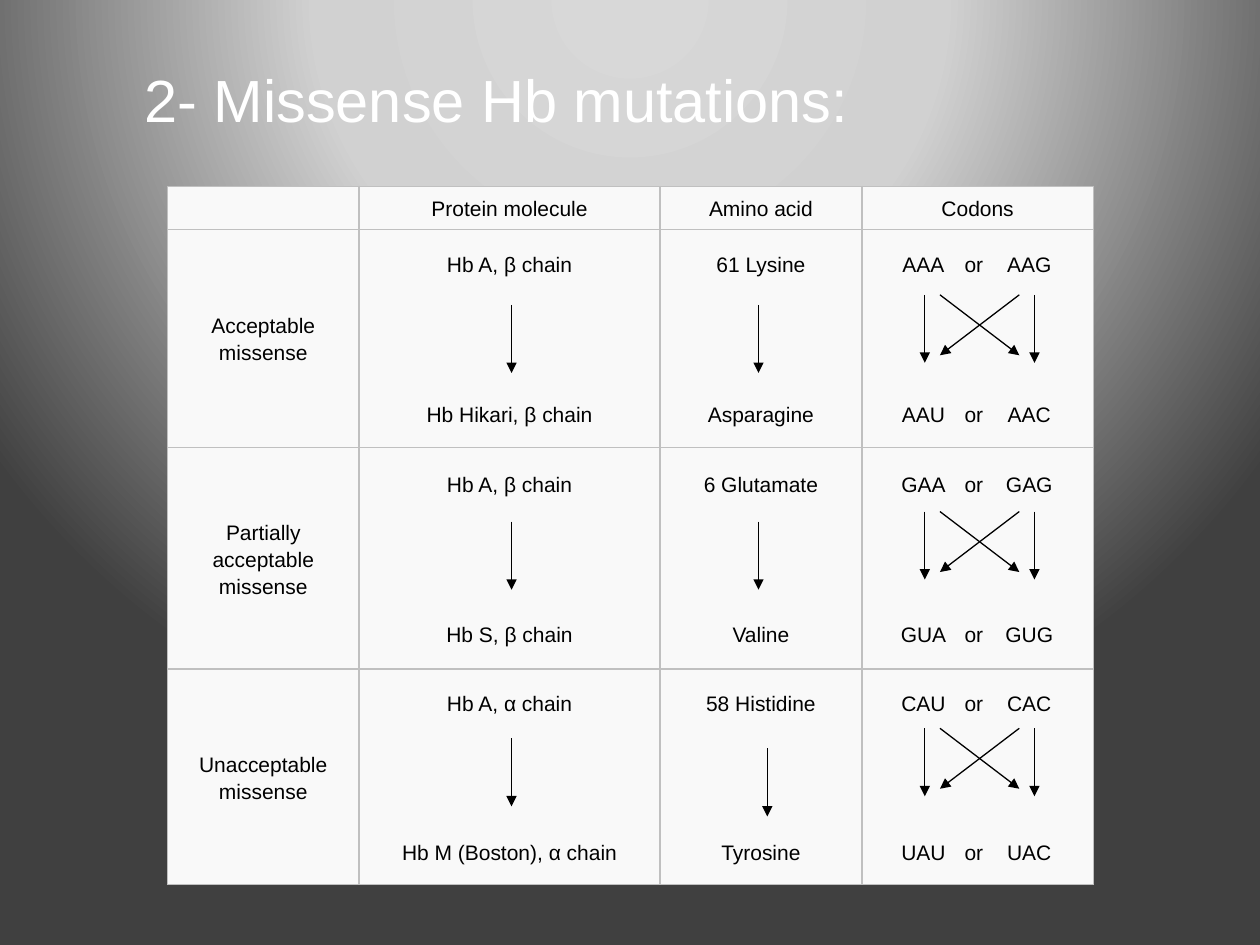
from itertools import product
from lxml.etree import SubElement
from pptx import Presentation
from pptx.dml.color import RGBColor
from pptx.enum.shapes import MSO_CONNECTOR
from pptx.enum.text import MSO_ANCHOR, PP_ALIGN
from pptx.oxml import parse_xml
from pptx.oxml.ns import nsdecls, qn
from pptx.util import Inches, Pt

TITLE = "2- Missense Hb mutations:"
HEADERS = ["", "Protein molecule", "Amino acid", "Codons"]
MUTATIONS = [
    {
        "kind": "Acceptable missense",
        "protein": ("Hb A, β chain", "Hb Hikari, β chain"),
        "amino": ("61 Lysine", "Asparagine"),
        "codons": (("AAA", "AAG"), ("AAU", "AAC")),
        "amino_arrow": (6.02, 2.42),
    },
    {
        "kind": "Partially acceptable missense",
        "protein": ("Hb A, β chain", "Hb S, β chain"),
        "amino": ("6 Glutamate", "Valine"),
        "codons": (("GAA", "GAG"), ("GUA", "GUG")),
        "amino_arrow": (6.02, 4.14),
    },
    {
        "kind": "Unacceptable missense",
        "protein": ("Hb A, α chain", "Hb M (Boston), α chain"),
        "amino": ("58 Histidine", "Tyrosine"),
        "codons": (("CAU", "CAC"), ("UAU", "UAC")),
        "amino_arrow": (6.09, 5.94),
    },
]
THEME = {
    "font": "Arial",
    "title_size": 34,
    "cell_size": 12,
    "title": "FFFFFF",
    "text": "000000",
    "cell": "F9F9F9",
    "border": "C0C0C0",
    "background": [(0, "D8D8D8"), (40, "D1D1D1"), (100, "404040")],
}
COLUMNS = [1.52, 2.39, 1.6, 1.84]
ROWS = [0.34, 1.73, 1.76, 1.71]
CODON_TABS = [0.42, 0.82, 1.26]
PAIR_GAP = 70
PROTEIN_X, PROTEIN_TOP = 4.06, 2.42
CROSS_TOP, ARROW_STEP = 2.34, 1.72
ARROW_LENGTH, CROSS_HEIGHT = 0.54, 0.48
OUTER_X, INNER_X = (7.34, 8.21), (7.46, 8.09)


def set_background(slide):
    stops = "".join(
        f'<a:gs pos="{position * 1000}"><a:srgbClr val="{color}"/></a:gs>'
        for position, color in THEME["background"]
    )
    slide.element.cSld.insert(0, parse_xml(
        f'<p:bg {nsdecls("p", "a")}><p:bgPr><a:gradFill rotWithShape="1">'
        f'<a:gsLst>{stops}</a:gsLst><a:path path="circle">'
        '<a:fillToRect l="50000" t="-80000" r="50000" b="180000"/></a:path>'
        "</a:gradFill><a:effectLst/></p:bgPr></p:bg>"
    ))


def style_font(font, size, color):
    font.name = THEME["font"]
    font.size = Pt(size)
    font.color.rgb = RGBColor.from_string(THEME[color])


def add_title(slide):
    shape = slide.shapes.add_textbox(Inches(1.05), Inches(0.31), Inches(8.56), Inches(0.94))
    frame = shape.text_frame
    frame.word_wrap = True
    frame.vertical_anchor = MSO_ANCHOR.MIDDLE
    run = frame.paragraphs[0].add_run()
    run.text = TITLE
    style_font(run.font, THEME["title_size"], "title")


def add_tabs(paragraph):
    tabs = SubElement(paragraph._p.get_or_add_pPr(), qn("a:tabLst"))
    for position in CODON_TABS:
        SubElement(tabs, qn("a:tab"), pos=str(Inches(position)), algn="ctr")


def style_cell(cell):
    properties = cell._tc.get_or_add_tcPr()
    for side in ("a:lnL", "a:lnR", "a:lnT", "a:lnB"):
        line = SubElement(properties, qn(side), w=str(Pt(1)))
        SubElement(SubElement(line, qn("a:solidFill")), qn("a:srgbClr"), val=THEME["border"])
    cell.fill.solid()
    cell.fill.fore_color.rgb = RGBColor.from_string(THEME["cell"])
    cell.vertical_anchor = MSO_ANCHOR.MIDDLE
    cell.margin_left = cell.margin_right = Inches(0.07)
    cell.margin_top = cell.margin_bottom = 0


def fill_cell(cell, lines):
    style_cell(cell)
    frame = cell.text_frame
    for index, line in enumerate(lines):
        paragraph = frame.add_paragraph() if index else frame.paragraphs[0]
        paragraph.line_spacing = 1.15
        if index:
            paragraph.space_before = Pt(PAIR_GAP)
        if "\t" in line:
            paragraph.alignment = PP_ALIGN.LEFT
            add_tabs(paragraph)
        else:
            paragraph.alignment = PP_ALIGN.CENTER
        paragraph.font.size = Pt(THEME["cell_size"])
        if line:
            run = paragraph.add_run()
            run.text = line
            style_font(run.font, THEME["cell_size"], "text")


def add_mutation_table(slide):
    table = slide.shapes.add_table(
        len(ROWS), len(COLUMNS), Inches(1.33), Inches(1.48),
        Inches(sum(COLUMNS)), Inches(sum(ROWS)),
    ).table
    table.first_row = table.horz_banding = False
    for column, width in zip(table.columns, COLUMNS):
        column.width = Inches(width)
    for row, height in zip(table.rows, ROWS):
        row.height = Inches(height)
    content = [[(header,) for header in HEADERS]]
    for mutation in MUTATIONS:
        codons = [f"\t{first}\tor\t{second}" for first, second in mutation["codons"]]
        content.append([(mutation["kind"],), mutation["protein"], mutation["amino"], codons])
    for row, column in product(range(len(ROWS)), range(len(COLUMNS))):
        fill_cell(table.cell(row, column), content[row][column])


def add_arrow(shapes, start, end):
    connector = shapes.add_connector(
        MSO_CONNECTOR.STRAIGHT, *[Inches(value) for value in (*start, *end)]
    )
    connector.line.width = Pt(0.75)
    connector.line.color.rgb = RGBColor.from_string(THEME["text"])
    SubElement(connector.line._get_or_add_ln(), qn("a:tailEnd"), type="triangle")
    SubElement(connector._element.spPr, qn("a:effectLst"))


def add_down_arrow(shapes, x, top):
    add_arrow(shapes, (x, top), (x, top + ARROW_LENGTH))


def add_codon_arrows(slide, top):
    shapes = slide.shapes.add_group_shape().shapes
    left, right = INNER_X
    for start, end in ((right, left), (left, right)):
        add_arrow(shapes, (start, top), (end, top + CROSS_HEIGHT))
    for x in OUTER_X:
        add_down_arrow(shapes, x, top)


def main():
    presentation = Presentation()
    presentation.slide_width = Inches(10)
    presentation.slide_height = Inches(7.5)
    slide = presentation.slides.add_slide(presentation.slide_layouts[6])
    set_background(slide)
    add_mutation_table(slide)
    for index, mutation in enumerate(MUTATIONS):
        offset = index * ARROW_STEP
        add_down_arrow(slide.shapes, PROTEIN_X, PROTEIN_TOP + offset)
        add_down_arrow(slide.shapes, *mutation["amino_arrow"])
        add_codon_arrows(slide, CROSS_TOP + offset)
    add_title(slide)
    presentation.save("out.pptx")


if __name__ == "__main__":
    main()
